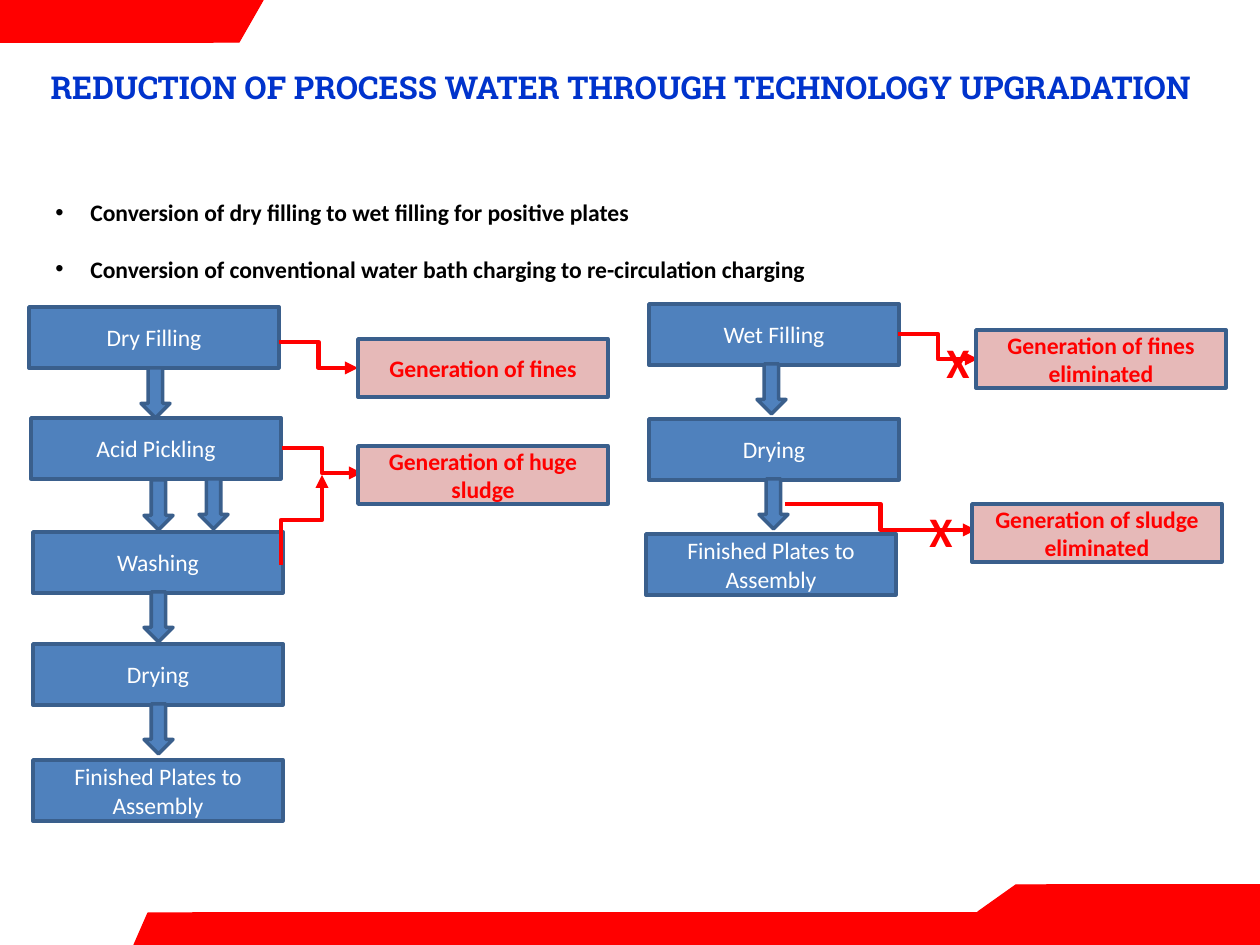
import pptx
import pptx.dml.color
import pptx.enum.shapes
import pptx.enum.text
import pptx.oxml
import pptx.oxml.ns
import pptx.util

RGB = pptx.dml.color.RGBColor
SHAPE = pptx.enum.shapes.MSO_SHAPE
ALIGN = pptx.enum.text.PP_ALIGN
ANCHOR = pptx.enum.text.MSO_ANCHOR

RED = RGB(0xFF, 0x00, 0x00)
BLUE = RGB(0x4F, 0x81, 0xBD)
NAVY = RGB(0x3A, 0x5F, 0x8C)
PINK = RGB(0xE6, 0xB9, 0xB8)
TITLE = RGB(0x00, 0x33, 0xCC)
WHITE = RGB(0xFF, 0xFF, 0xFF)
BLACK = RGB(0x00, 0x00, 0x00)

STEP_W, STEP_H = 250, 61
EFFECT_W, EFFECT_H = 250, 58
ARROW_W, ARROW_H = 29, 50


def px(n):
    """Turn pixels into EMU."""
    return pptx.util.Emu(round(n * 914400 / 126))


def sub(parent, tag, **attrs):
    """Append a DrawingML element with attributes."""
    el = pptx.oxml.parse_xml(f"<{tag} {pptx.oxml.ns.nsdecls('a')}/>")
    for name, value in attrs.items():
        el.set(name, str(value))
    parent.append(el)


def write(tf, text, size=13.5, color=WHITE, bold=False, font="Calibri",
          align=ALIGN.CENTER, bullet=False, gap=0):
    """Fill a text frame, one paragraph for each line of text."""
    tf.word_wrap = True
    for i, line in enumerate(text.split("\n")):
        p = tf.add_paragraph() if i else tf.paragraphs[0]
        p.alignment = align
        if i:
            p.space_before = pptx.util.Pt(gap)
        if bullet:
            pPr = p._p.get_or_add_pPr()
            pPr.set("marL", str(px(35)))
            pPr.set("indent", str(-px(35)))
            sub(pPr, "a:buFont", typeface="Arial")
            sub(pPr, "a:buChar", char="•")
        r = p.add_run()
        r.text = line
        r.font.size = pptx.util.Pt(size)
        r.font.name = font
        r.font.bold = bold
        r.font.color.rgb = color


def paint(sp, fill, line, width):
    """Set fill and outline and drop the shadow."""
    sp.shadow.inherit = False
    sp.fill.solid()
    sp.fill.fore_color.rgb = fill
    sp.line.color.rgb = line
    sp.line.width = pptx.util.Pt(width)


def add_block(slide, kind, x, y, w, h, fill=BLUE, text="", **fmt):
    """Add a preset shape with an optional centred label."""
    sp = slide.shapes.add_shape(kind, px(x), px(y), px(w), px(h))
    paint(sp, fill, NAVY, 2)
    if text:
        sp.text_frame.vertical_anchor = ANCHOR.MIDDLE
        write(sp.text_frame, text, **fmt)


def add_text(slide, x, y, w, h, text, **fmt):
    """Add a text box."""
    write(slide.shapes.add_textbox(px(x), px(y), px(w), px(h)).text_frame, text, **fmt)


def add_elbow(slide, x1, y1, x2, y2, vertical=False):
    """Add a red elbow arrow, leaving vertically if asked."""
    if vertical:
        cx, cy, dx, dy = (x1 + x2) / 2, (y1 + y2) / 2, x2 - x1, y2 - y1
        x1, y1, x2, y2 = cx - dy / 2, cy + dx / 2, cx + dy / 2, cy - dx / 2
    c = slide.shapes.add_connector(pptx.enum.shapes.MSO_CONNECTOR.ELBOW,
                                   px(x1), px(y1), px(x2), px(y2))
    c.line.color.rgb = RED
    c.line.width = pptx.util.Pt(2.5)
    spPr = c._element.spPr
    if vertical:
        spPr.xfrm.set("rot", "5400000")
    sub(c.line._get_or_add_ln(), "a:tailEnd", type="triangle")
    sub(spPr, "a:effectLst")


def add_band(slide, x, y, polygons):
    """Draw the red polygons of a slide edge from the given corner."""
    for points in polygons:
        points = [(px(x + dx), px(y + dy)) for dx, dy in points]
        fb = slide.shapes.build_freeform(*points[0], scale=1.0)
        fb.add_line_segments(points[1:], close=True)
        paint(fb.convert_to_shape(), RED, RED, 0.75)


def add_heading(slide, x, y, w):
    """Place the title and the bullet list below it."""
    add_text(slide, x, y, w, 89,
             "REDUCTION OF PROCESS WATER THROUGH TECHNOLOGY UPGRADATION",
             size=18, color=TITLE, bold=True, font="Roboto Slab")
    add_text(slide, x + 8, y + 130, w + 20, 98,
             "Conversion of dry filling to wet filling for positive plates\n"
             "Conversion of conventional water bath charging to re-circulation charging",
             color=BLACK, bold=True, align=ALIGN.LEFT, bullet=True, gap=16)


def add_flow(slide, x, y, steps, arrows, links, effects, marks=()):
    """Draw one process flow with its side effects from its top left corner."""
    for dx, dy, text in steps:
        add_block(slide, SHAPE.RECTANGLE, x + dx, y + dy, STEP_W, STEP_H, text=text)
    for dx, dy in arrows:
        add_block(slide, SHAPE.DOWN_ARROW, x + dx, y + dy, ARROW_W, ARROW_H)
    for x1, y1, x2, y2, vertical in links:
        add_elbow(slide, x + x1, y + y1, x + x2, y + y2, vertical)
    for dx, dy, text in effects:
        add_block(slide, SHAPE.RECTANGLE, x + dx, y + dy, EFFECT_W, EFFECT_H,
                  PINK, text, color=RED, bold=True)
    for dx, dy in marks:
        add_text(slide, x + dx, y + dy, 73, 63, "X", size=24, color=RED,
                 bold=True, align=ALIGN.LEFT)


def main():
    """Build the slide and save it."""
    prs = pptx.Presentation()
    prs.slide_width, prs.slide_height = px(1260), px(945)
    slide = prs.slides.add_slide(prs.slide_layouts[6])
    add_band(slide, 0, 0, [
        [(0, 0), (0, 42), (213, 42), (213, 0)],
        [(168, 0), (192, 42), (239, 42), (263, 0)]])
    add_band(slide, 134, 885, [
        [(913, 0), (913, 28), (1126, 28), (1126, 0)],
        [(952, 28), (928, 0), (882, 0), (844, 27)],
        [(59, 28), (59, 60), (1126, 60), (1126, 28)],
        [(85, 60), (61, 28), (14, 28), (0, 60)]])
    add_heading(slide, 35, 62, 1172)
    add_flow(
        slide, 29, 307,
        steps=[(0, 0, "Dry Filling"), (2, 111, "Acid Pickling"), (4, 225, "Washing"),
               (4, 337, "Drying"), (4, 453, "Finished Plates to Assembly")],
        arrows=[(112, 61), (115, 173), (170, 172), (115, 285), (115, 397)],
        links=[(250, 35, 329, 61, False), (253, 141, 333, 166, False),
               (252, 258, 293, 168, True)],
        effects=[(329, 32, "Generation of fines"),
                 (329, 139, "Generation of huge sludge")])
    add_flow(
        slide, 646, 304,
        steps=[(3, 0, "Wet Filling"), (3, 115, "Drying"),
               (0, 230, "Finished Plates to Assembly")],
        arrows=[(111, 60), (113, 175)],
        links=[(252, 30, 332, 55, False), (139, 200, 330, 226, False)],
        effects=[(330, 26, "Generation of fines eliminated"),
                 (326, 200, "Generation of sludge eliminated")],
        marks=[(288, 26), (271, 195)])
    prs.save("out.pptx")


if __name__ == "__main__":
    main()
